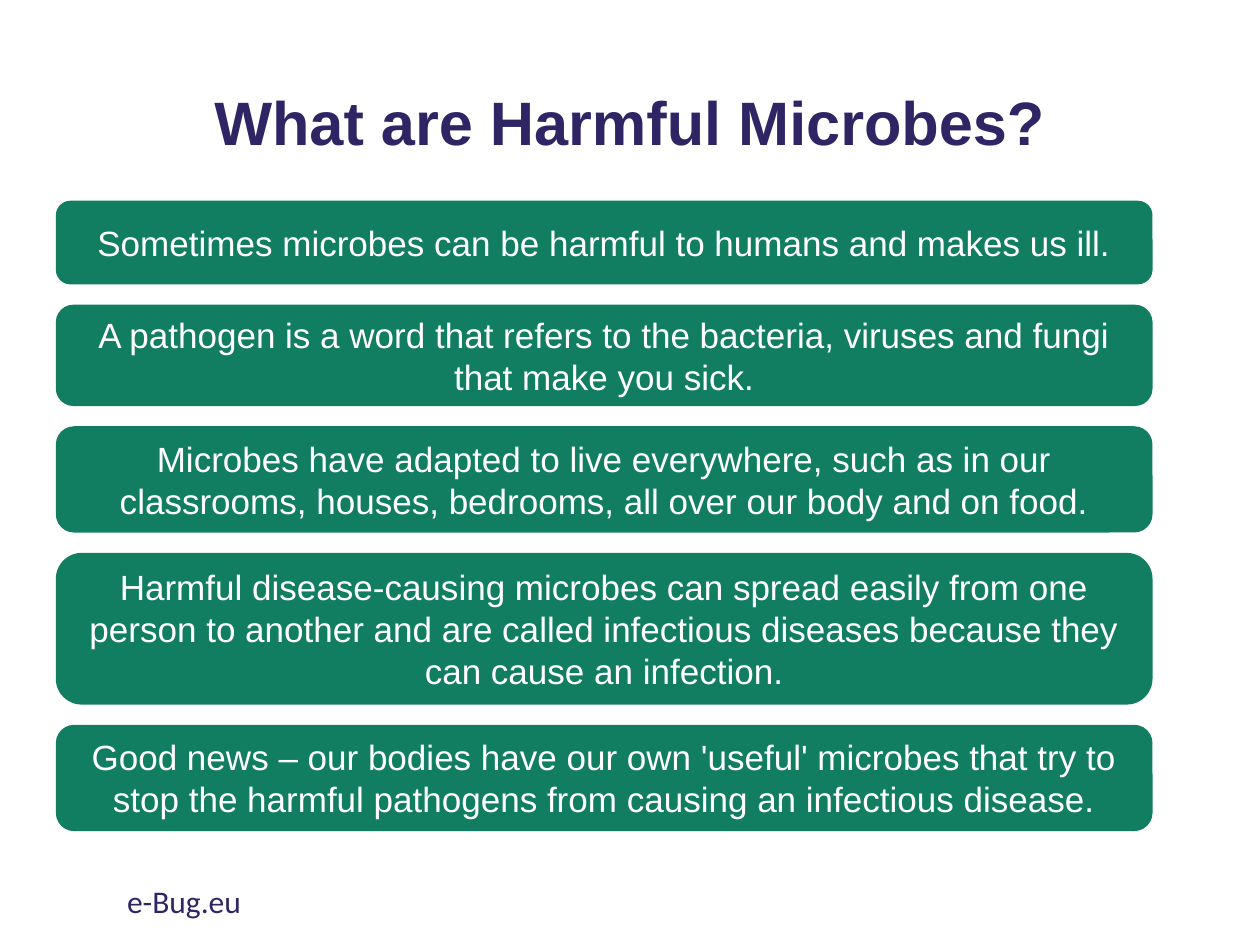
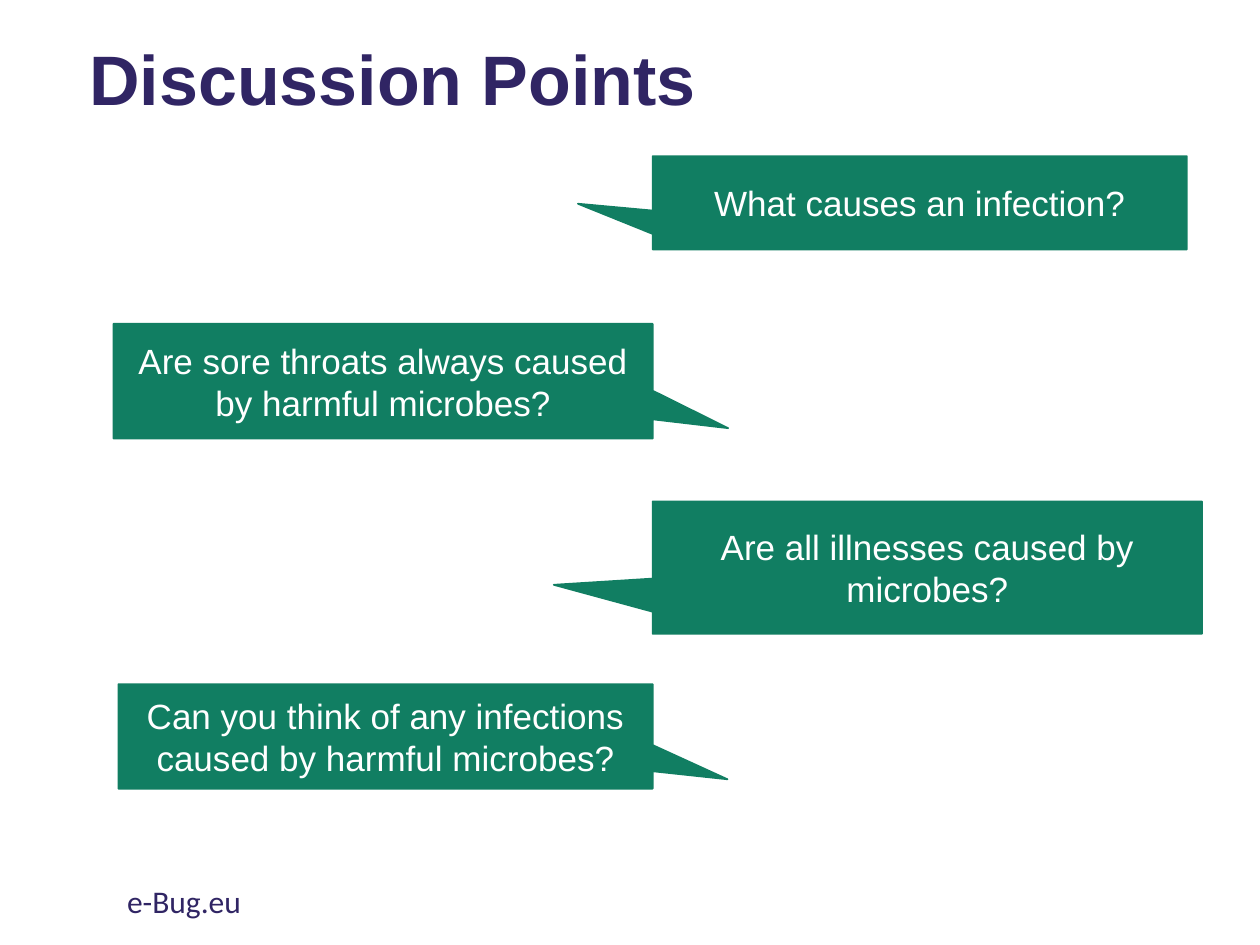
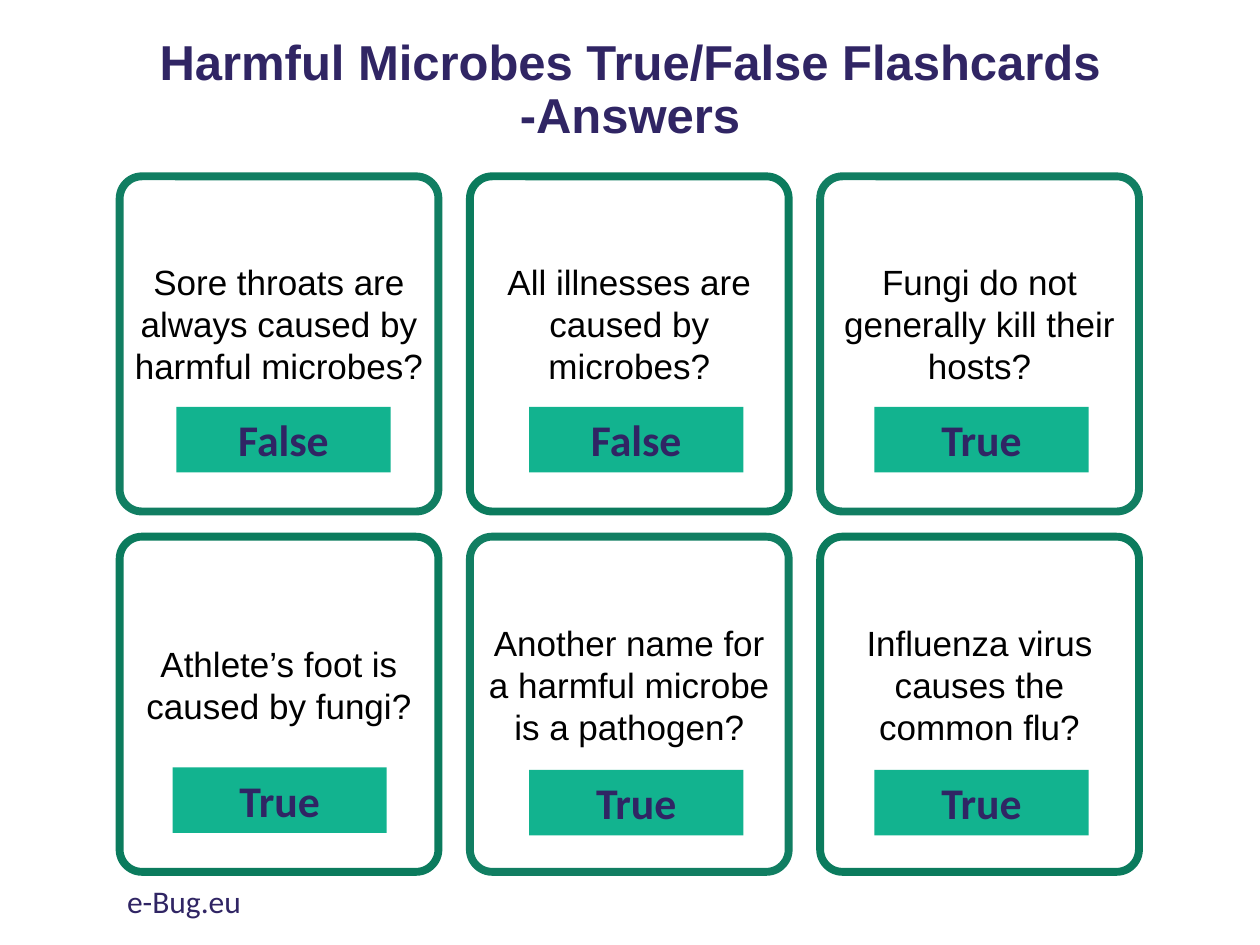
from dataclasses import dataclass
from typing import NamedTuple

import pptx
import pptx.dml.color
import pptx.enum.shapes
import pptx.enum.text
import pptx.util

SHAPE = pptx.enum.shapes.MSO_SHAPE
ANCHOR = pptx.enum.text.MSO_ANCHOR
ALIGN = pptx.enum.text.PP_ALIGN
TITLE_ONLY_LAYOUT = 5

# The slide is a grid of 100 columns by 75 rows of square cells.
COLUMNS, ROWS = 100, 75
CELL = pptx.util.Inches(0.1)


@dataclass(frozen=True)
class Theme:
    heading_font: str = "Arial"
    label_font: str = "Calibri"
    navy: str = "302564"
    green: str = "117E62"
    deep_green: str = "0B7B5D"
    mint: str = "12B38F"
    white: str = "FFFFFF"
    black: str = "000000"
    body_size: int = 20
    answer_size: int = 25
    footer_size: int = 18


class Area(NamedTuple):
    """A rectangle in grid columns and rows."""
    left: float
    top: float
    width: float
    height: float

    def lengths(self) -> list[int]:
        return [round(cells * CELL) for cells in self]


class TextStyle(NamedTuple):
    font: str
    size: int
    color: str
    bold: bool = False
    align: ALIGN = ALIGN.CENTER


class Bar(NamedTuple):
    text: str
    height: float


class Callout(NamedTuple):
    text: str
    area: Area
    tip: tuple[float, float]


class Flashcard(NamedTuple):
    statement: str
    answer: str
    answer_left: float
    answer_top: float


THEME = Theme()
ON_GREEN = TextStyle(THEME.heading_font, THEME.body_size, THEME.white)
STATEMENT = ON_GREEN._replace(color=THEME.black)
ANSWER = TextStyle(THEME.label_font, THEME.answer_size, THEME.navy, bold=True)
FOOTER = TextStyle(THEME.label_font, THEME.footer_size, THEME.navy, align=ALIGN.LEFT)

FOOTER_AREA = Area(9.1, 69.5, 33.8, 4)

BAR_LEFT, BAR_TOP, BAR_WIDTH, BAR_GAP = 4.5, 16, 86.9, 1.75
BARS = [
    Bar("Sometimes microbes can be harmful to humans and makes us ill.", 6.5),
    Bar("A pathogen is a word that refers to the bacteria, viruses and fungi "
        "that make you sick.", 7.9),
    Bar("Microbes have adapted to live everywhere, such as in our classrooms, "
        "houses, bedrooms, all over our body and on food.", 8.3),
    Bar("Harmful disease-causing microbes can spread easily from one person to another "
        "and are called infectious diseases because they can cause an infection.", 11.9),
    Bar("Good news – our bodies have our own 'useful' microbes that try to stop "
        "the harmful pathogens from causing an infectious disease.", 8.3),
]

CALLOUTS = [
    Callout("What causes an infection?", Area(51.8, 12.4, 42.4, 7.4), (-0.64, 0.01)),
    Callout("Are sore throats always caused by harmful microbes?",
            Area(9, 25.7, 42.8, 9.1), (0.64, 0.41)),
    Callout("Are all illnesses caused by microbes?",
            Area(51.8, 39.8, 43.6, 10.5), (-0.68, 0.13)),
    Callout("Can you think of any infections caused by harmful microbes?",
            Area(9.4, 54.3, 42.4, 8.3), (0.64, 0.41)),
]

CARDS_PER_ROW = 3
FIRST_CARD = Area(9.5, 14, 25.3, 26.6)
CARD_PITCH_X, CARD_PITCH_Y = 27.8, 28.6
CARD_CORNER = 0.07
CARD_BOTTOM_INSET = 4.2
ANSWER_WIDTH, ANSWER_HEIGHT = 17, 5.2
FLASHCARDS = [
    Flashcard("Sore throats are always caused by harmful microbes?", "False", 14, 32.3),
    Flashcard("All illnesses are caused by microbes?", "False", 42, 32.3),
    Flashcard("Fungi do not generally kill their hosts?", "True", 69.4, 32.3),
    Flashcard("Athlete’s foot is caused by fungi?", "True", 13.7, 60.9),
    Flashcard("Another name for a harmful microbe is a pathogen?", "True", 42, 61.1),
    Flashcard("Influenza virus causes the common flu?", "True", 69.4, 61.1),
]


def rgb(color: str) -> pptx.dml.color.RGBColor:
    return pptx.dml.color.RGBColor.from_string(color)


def write(box, text: str, style: TextStyle, anchor: ANCHOR = ANCHOR.MIDDLE):
    """Fill the shape with one styled paragraph and return that paragraph."""
    frame = box.text_frame
    frame.word_wrap = True
    frame.auto_size = pptx.enum.text.MSO_AUTO_SIZE.NONE
    frame.vertical_anchor = anchor
    para = frame.paragraphs[0]
    para.text = text
    para.alignment = style.align
    para.font.name = style.font
    para.font.size = pptx.util.Pt(style.size)
    para.font.bold = style.bold
    para.font.color.rgb = rgb(style.color)
    return para


def add_box(page, kind: SHAPE, area: Area, fill: str | None = None,
            line: str | None = None, line_width: float = 1):
    box = page.shapes.add_shape(kind, *area.lengths())
    box.shadow.inherit = False
    if fill:
        box.fill.solid()
        box.fill.fore_color.rgb = rgb(fill)
    else:
        box.fill.background()
    if line:
        box.line.color.rgb = rgb(line)
        box.line.width = pptx.util.Pt(line_width)
    else:
        box.line.fill.background()
    return box


def add_page(deck, title: str, area: Area, size: int, align: ALIGN = ALIGN.CENTER):
    """Add a slide with its title and the shared footer."""
    page = deck.slides.add_slide(deck.slide_layouts[TITLE_ONLY_LAYOUT])
    heading = page.shapes.title
    heading.left, heading.top, heading.width, heading.height = area.lengths()
    style = TextStyle(THEME.heading_font, size, THEME.navy, bold=True, align=align)
    write(heading, title, style).line_spacing = 0.9
    footer = page.shapes.add_textbox(*FOOTER_AREA.lengths())
    write(footer, "e-Bug.eu", FOOTER, ANCHOR.TOP)
    return page


def add_bars(page, bars: list[Bar]) -> None:
    top = BAR_TOP
    for bar in bars:
        area = Area(BAR_LEFT, top, BAR_WIDTH, bar.height)
        box = add_box(page, SHAPE.ROUNDED_RECTANGLE, area, THEME.green, THEME.green)
        write(box, bar.text, ON_GREEN)
        top += bar.height + BAR_GAP


def add_callout(page, callout: Callout) -> None:
    box = add_box(page, SHAPE.RECTANGULAR_CALLOUT, callout.area, THEME.green, THEME.green)
    box.adjustments[0], box.adjustments[1] = callout.tip
    write(box, callout.text, ON_GREEN)


def add_flashcard(page, index: int, card: Flashcard) -> None:
    row, column = divmod(index, CARDS_PER_ROW)
    area = FIRST_CARD._replace(left=FIRST_CARD.left + column * CARD_PITCH_X,
                               top=FIRST_CARD.top + row * CARD_PITCH_Y)
    outline = THEME.deep_green if index % 2 else THEME.green
    box = add_box(page, SHAPE.ROUNDED_RECTANGLE, area, line=outline, line_width=4.5)
    box.adjustments[0] = CARD_CORNER
    write(box, card.statement, STATEMENT)
    frame = box.text_frame
    frame.margin_left = frame.margin_right = round(CELL / 2)
    frame.margin_top = CELL
    frame.margin_bottom = round(CARD_BOTTOM_INSET * CELL)

    answer_area = Area(card.answer_left, card.answer_top, ANSWER_WIDTH, ANSWER_HEIGHT)
    answer = add_box(page, SHAPE.RECTANGLE, answer_area, THEME.mint)
    write(answer, card.answer, ANSWER, ANCHOR.TOP)


def main() -> None:
    deck = pptx.Presentation()
    deck.slide_width, deck.slide_height = COLUMNS * CELL, ROWS * CELL

    facts = add_page(deck, "What are Harmful Microbes?", Area(6.9, 2.7, 86.2, 14.5), 35)
    add_bars(facts, BARS)

    discussion = add_page(deck, "Discussion Points", Area(6.1, 1.5, 86.2, 10.1), 40, ALIGN.LEFT)
    for callout in CALLOUTS:
        add_callout(discussion, callout)

    answers = add_page(deck, "Harmful Microbes True/False Flashcards -Answers",
                       Area(6.9, 0, 86.2, 14.5), 28)
    for index, card in enumerate(FLASHCARDS):
        add_flashcard(answers, index, card)

    deck.save("out.pptx")


if __name__ == "__main__":
    main()
